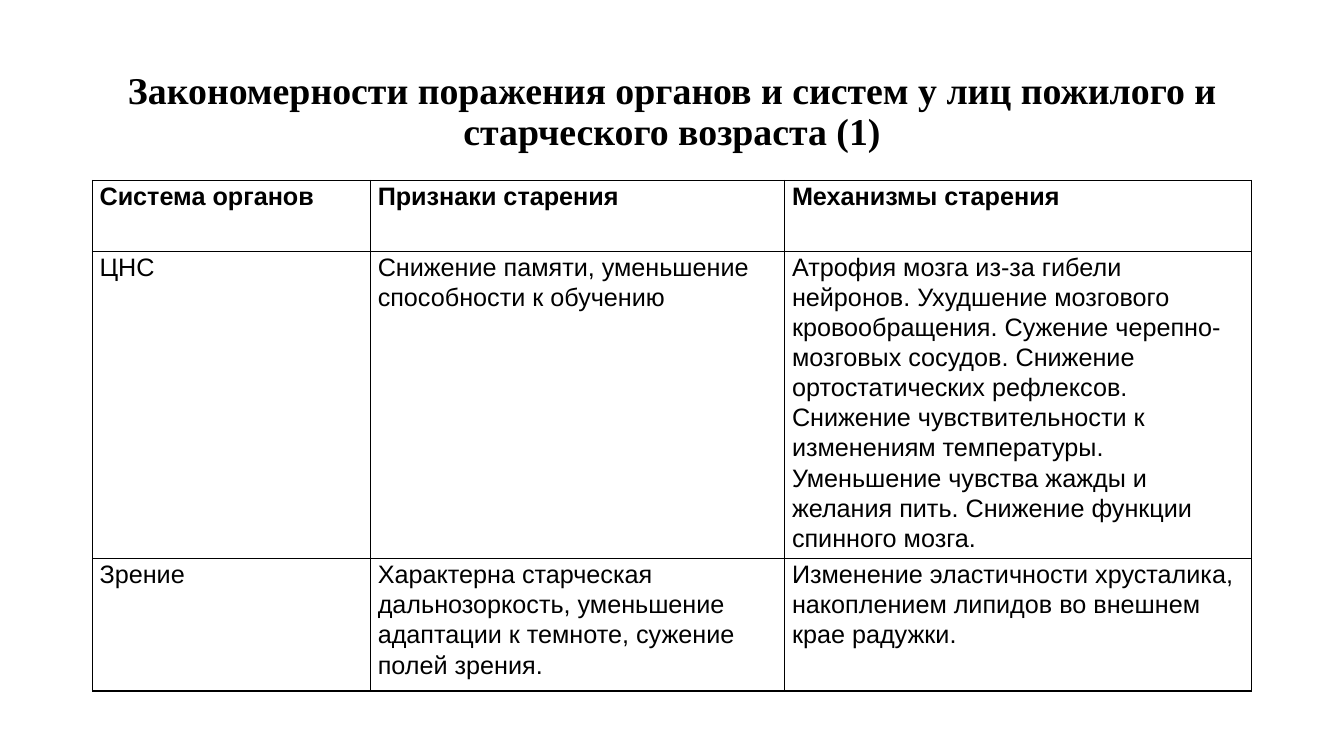
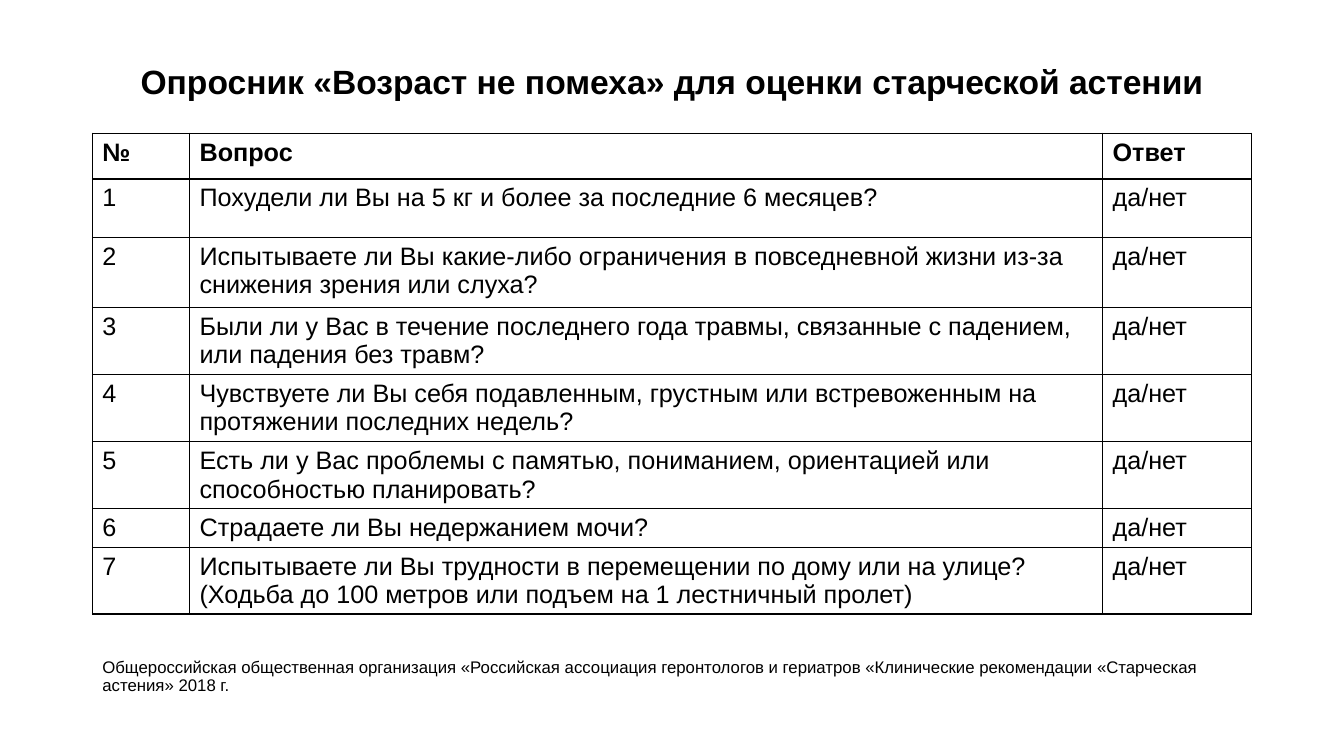
"""Build two slides on ageing: organ system changes and a frailty questionnaire."""
import pptx
import pptx.dml.color
import pptx.enum.text
import pptx.oxml
import pptx.oxml.ns
import pptx.util
from pptx.util import Cm

BLACK = pptx.dml.color.RGBColor(0x00, 0x00, 0x00)
FONT = "Arial"
LEFT = Cm(2.33)
WIDTH = Cm(29.21)
TITLE_ONLY = 5
ALIGN = pptx.enum.text.PP_ALIGN
MIDDLE = pptx.enum.text.MSO_ANCHOR.MIDDLE


def write_text(frame, text, size, font=FONT, bold=False, align=ALIGN.LEFT, spacing=1.0):
    frame.word_wrap = True
    paragraph = frame.paragraphs[0]
    paragraph.alignment = align
    paragraph.line_spacing = spacing
    run = paragraph.add_run()
    run.text = text
    run.font.name = font
    run.font.size = pptx.util.Pt(size)
    run.font.bold = bold
    run.font.color.rgb = BLACK


def add_border(cell):
    properties = cell._tc.get_or_add_tcPr()
    for index, side in enumerate(("lnL", "lnR", "lnT", "lnB")):
        line = pptx.oxml.parse_xml(
            f'<a:{side} {pptx.oxml.ns.nsdecls("a")} w="12700"><a:solidFill>'
            f'<a:srgbClr val="{BLACK}"/></a:solidFill></a:{side}>'
        )
        properties.insert(index, line)


questions = [
    "Похудели ли Вы на 5 кг и более за последние 6 месяцев?",
    "Испытываете ли Вы какие-либо ограничения в повседневной жизни из-за "
    "снижения зрения или слуха?",
    "Были ли у Вас в течение последнего года травмы, связанные с падением, "
    "или падения без травм?",
    "Чувствуете ли Вы себя подавленным, грустным или встревоженным на "
    "протяжении последних недель?",
    "Есть ли у Вас проблемы с памятью, пониманием, ориентацией или "
    "способностью планировать?",
    "Страдаете ли Вы недержанием мочи?",
    "Испытываете ли Вы трудности в перемещении по дому или на улице? "
    "(Ходьба до 100 метров или подъем на 1 лестничный пролет)",
]

slides = [
    {
        "title": "Закономерности поражения органов и систем у лиц пожилого и "
                 "старческого возраста (1)",
        "title_font": "Times New Roman",
        "title_size": 27,
        "title_top": 1.55,
        "table_top": 4.55,
        "columns": [7.01, 10.44, 11.76],
        "rows": [1.78, 7.75, 3.33],
        "margins": (0.18, 0),
        "spacing": 1.07,
        "cells": [
            ["Система органов", "Признаки старения", "Механизмы старения"],
            [
                "ЦНС",
                "Снижение памяти, уменьшение способности к обучению",
                "Атрофия мозга из-за гибели нейронов. Ухудшение мозгового "
                "кровообращения. Сужение черепно-мозговых сосудов. Снижение "
                "ортостатических рефлексов. Снижение чувствительности к "
                "изменениям температуры. Уменьшение чувства жажды и желания "
                "пить. Снижение функции спинного мозга.",
            ],
            [
                "Зрение",
                "Xарактерна старческая дальнозоркость, уменьшение адаптации к "
                "темноте, сужение полей зрения.",
                "Изменение эластичности хрусталика, накоплением липидов во "
                "внешнем крае радужки.",
            ],
        ],
        "source": None,
    },
    {
        "title": "Опросник «Возраст не помеха» для оценки старческой астении",
        "title_font": FONT,
        "title_size": 24,
        "title_top": 0.81,
        "table_top": 3.36,
        "columns": [2.45, 23.01, 3.75],
        "rows": [1.15, 1.47, 1.77, 1.68, 1.7, 1.67, 0.97, 1.67],
        "margins": (0.25, 0.13),
        "spacing": 1.0,
        "cells": [["№", "Вопрос", "Ответ"]] + [
            [str(number), question, "да/нет"]
            for number, question in enumerate(questions, start=1)
        ],
        "source": "Общероссийская общественная организация «Российская ассоциация "
                  "геронтологов и гериатров «Клинические рекомендации «Старческая "
                  "астения» 2018 г.",
    },
]

presentation = pptx.Presentation()
presentation.slide_width = Cm(33.87)
presentation.slide_height = Cm(19.05)

for content in slides:
    slide = presentation.slides.add_slide(presentation.slide_layouts[TITLE_ONLY])

    title = slide.shapes.title
    title.left, title.top = LEFT, Cm(content["title_top"])
    title.width, title.height = WIDTH, Cm(2.6)
    title.text_frame.auto_size = pptx.enum.text.MSO_AUTO_SIZE.NONE
    title.text_frame.vertical_anchor = MIDDLE
    write_text(title.text_frame, content["title"], content["title_size"],
               content["title_font"], True, ALIGN.CENTER, 0.9)

    rows, columns = content["rows"], content["columns"]
    table = slide.shapes.add_table(
        len(rows), len(columns), LEFT, Cm(content["table_top"]), WIDTH, Cm(sum(rows))
    ).table
    table.first_row = False
    table.horz_banding = False
    for column, width in zip(table.columns, columns):
        column.width = Cm(width)
    side_margin, end_margin = content["margins"]
    for row_index, texts in enumerate(content["cells"]):
        table.rows[row_index].height = Cm(rows[row_index])
        for column_index, text in enumerate(texts):
            cell = table.cell(row_index, column_index)
            cell.margin_left = cell.margin_right = Cm(side_margin)
            cell.margin_top = cell.margin_bottom = Cm(end_margin)
            cell.fill.background()
            add_border(cell)
            write_text(cell.text_frame, text, 18, bold=row_index == 0,
                       spacing=content["spacing"])

    if content["source"]:
        source = slide.shapes.add_textbox(LEFT, Cm(16.33), WIDTH, Cm(1.45))
        source.text_frame.vertical_anchor = MIDDLE
        write_text(source.text_frame, content["source"], 12, spacing=0.9)

presentation.save("out.pptx")
